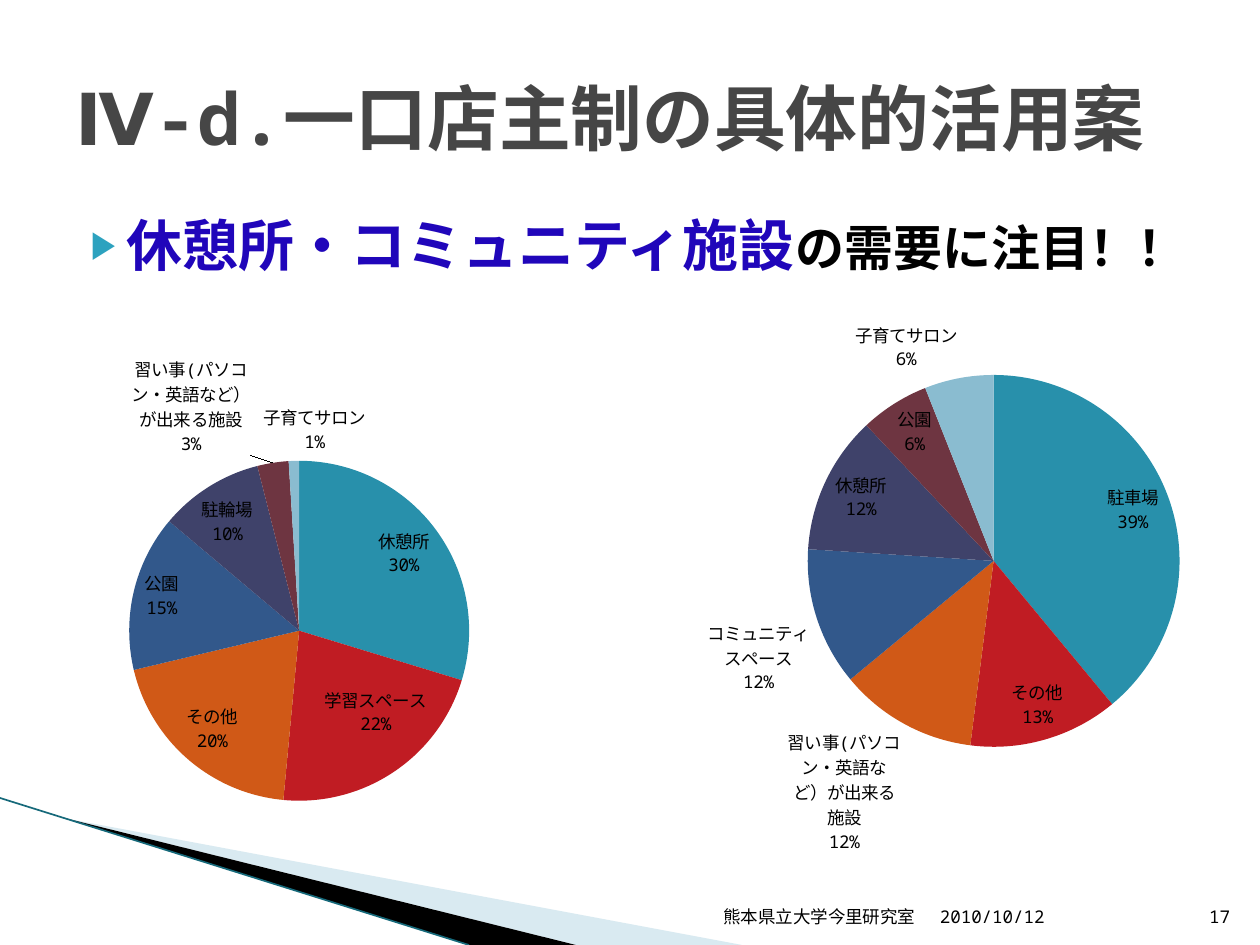
from dataclasses import dataclass

from lxml.etree import SubElement
from pptx import Presentation
from pptx.chart.data import CategoryChartData
from pptx.dml.color import RGBColor
from pptx.enum.chart import XL_CHART_TYPE, XL_LABEL_POSITION
from pptx.enum.text import MSO_ANCHOR, MSO_AUTO_SIZE, PP_ALIGN
from pptx.oxml import parse_xml
from pptx.oxml.ns import nsdecls, qn
from pptx.util import Pt


@dataclass(frozen=True)
class Theme:
    """Colours, font and type sizes of the slide."""
    font: str = "Noto Sans Mono"
    title: str = "464646"
    highlight: str = "2006BA"
    text: str = "000000"
    bullet: str = "2DA2BF"
    swoosh: str = "A0CBDC"
    edge: str = "16697A"
    slices: tuple = ("2890AB", "C01C23", "D05917", "32588B", "3F426A", "6E3541", "8ABCD0")
    title_size: int = 41
    highlight_size: int = 32
    body_size: int = 28
    small_size: int = 10


THEME = Theme()
LESSONS = "習い事(パソコン・英語など）が出来る施設"


def rgb(value):
    """Return the colour for a hex value."""
    return RGBColor.from_string(value)


def style_font(font, size, color, bold=False):
    """Apply the theme font with a size and colour."""
    font.name, font.size, font.bold = THEME.font, Pt(size), bold
    font.color.rgb = rgb(color)


def place(shape, box):
    """Move a shape to a box of left, top, width and height."""
    shape.left, shape.top, shape.width, shape.height = (Pt(length) for length in box)


def add_wedge(slide, points, color, alpha=None):
    """Draw one filled wedge of the corner decoration."""
    builder = slide.shapes.build_freeform(Pt(points[0][0]), Pt(points[0][1]), scale=1.0)
    builder.add_line_segments([(Pt(x), Pt(y)) for x, y in points[1:]], close=True)
    wedge = builder.convert_to_shape()
    wedge.shadow.inherit = False
    wedge.fill.solid()
    wedge.fill.fore_color.rgb = rgb(color)
    wedge.line.fill.background()
    if alpha:
        fill_color = wedge.element.spPr.find(qn("a:solidFill"))[0]
        SubElement(fill_color, qn("a:alpha"), val=str(alpha * 1000))


def add_decoration(slide, box):
    """Draw the wedges and the edge line in the bottom left corner."""
    left, top, width, height = box
    right, bottom = left + width, top + height
    tip = (left + 39, top + 12)
    add_wedge(slide, [tip, (right, bottom), (left + 329, bottom)], THEME.swoosh, 40)
    add_wedge(slide, [tip, (left + 329, bottom), (left + 268, bottom)], "000000")
    edge = slide.shapes.add_connector(1, Pt(left), Pt(top), Pt(left + 268), Pt(bottom))
    edge.line.color.rgb = rgb(THEME.edge)
    edge.line.width = Pt(0.95)
    SubElement(edge.element.spPr, qn("a:effectLst"))


def fill_title(slide, box):
    """Fill the title placeholder."""
    title = slide.shapes.title
    place(title, box)
    frame = title.text_frame
    frame.text = "Ⅳ-d.一口店主制の具体的活用案"
    frame.auto_size = MSO_AUTO_SIZE.NONE
    frame.vertical_anchor = MSO_ANCHOR.MIDDLE
    paragraph = frame.paragraphs[0]
    paragraph.alignment = PP_ALIGN.LEFT
    style_font(paragraph.font, THEME.title_size, THEME.title, True)


def fill_body(slide, box):
    """Fill the body placeholder with the bulleted key message."""
    body = slide.placeholders[1]
    place(body, box)
    body.text_frame.auto_size = MSO_AUTO_SIZE.NONE
    paragraph = body.text_frame.paragraphs[0]
    paragraph.space_before = Pt(0)
    properties = paragraph._p.get_or_add_pPr()
    properties.set("marL", str(Pt(28.8)))
    properties.set("indent", str(-Pt(20.2)))
    bullet_color = SubElement(properties, qn("a:buClr"))
    SubElement(bullet_color, qn("a:srgbClr"), val=THEME.bullet)
    SubElement(properties, qn("a:buSzPct"), val="68000")
    SubElement(properties, qn("a:buChar"), char="▶")
    for text, size, color in (
        ("休憩所・コミュニティ施設", THEME.highlight_size, THEME.highlight),
        ("の需要に注目！！", THEME.body_size, THEME.text),
    ):
        run = paragraph.add_run()
        run.text = text
        style_font(run.font, size, color, True)


def add_footer(slide, box):
    """Place laboratory, date and slide number side by side."""
    left, top, width, height = box
    for text, part_width, alignment in (
        ("熊本県立大学今里研究室", 185, PP_ALIGN.RIGHT),
        ("2010/10/12", 151, PP_ALIGN.LEFT),
        ("17", width - 336, PP_ALIGN.RIGHT),
    ):
        label = slide.shapes.add_textbox(Pt(left), Pt(top), Pt(part_width), Pt(height))
        frame = label.text_frame
        frame.word_wrap = True
        frame.vertical_anchor = MSO_ANCHOR.BOTTOM
        paragraph = frame.paragraphs[0]
        paragraph.text = text
        paragraph.alignment = alignment
        style_font(paragraph.font, THEME.small_size, THEME.text)
        left += part_width


def set_plot_box(chart, box, pie_box):
    """Fix the pie inside the chart box."""
    left, top, width, height = box
    pie_left, pie_top, diameter = pie_box
    values = {
        "x": (pie_left - left) / width, "y": (pie_top - top) / height,
        "w": diameter / width, "h": diameter / height,
    }
    modes = '<c:layoutTarget val="inner"/><c:xMode val="edge"/><c:yMode val="edge"/>'
    sizes = "".join(f'<c:{name} val="{value:.3f}"/>' for name, value in values.items())
    plot_area = chart._chartSpace.chart.plotArea
    for layout in plot_area.findall(qn("c:layout")):
        plot_area.remove(layout)
    plot_area.insert(0, parse_xml(
        f'<c:layout {nsdecls("c")}><c:manualLayout>{modes}{sizes}</c:manualLayout></c:layout>'))


def add_pie(slide, box, pie_box, shares):
    """Add a pie chart labelled with category and percentage."""
    data = CategoryChartData()
    data.categories = list(shares)
    data.add_series("Series 1", list(shares.values()))
    chart = slide.shapes.add_chart(
        XL_CHART_TYPE.PIE, *(Pt(length) for length in box), data).chart
    chart.has_legend = chart.has_title = False
    style_font(chart.font, THEME.small_size, THEME.text)
    set_plot_box(chart, box, pie_box)
    plot = chart.plots[0]
    plot.vary_by_categories = True
    for index, color in enumerate(THEME.slices):
        fill = plot.series[0].points[index].format.fill
        fill.solid()
        fill.fore_color.rgb = rgb(color)
    labels = plot.series[0].data_labels
    labels.show_value = False
    labels.show_category_name = labels.show_percentage = True
    labels.number_format, labels.number_format_is_linked = "0%", False
    labels.position = XL_LABEL_POSITION.BEST_FIT
    separator = parse_xml(f'<c:separator {nsdecls("c")}>\n</c:separator>')
    labels._element.find(qn("c:showBubbleSize")).addnext(separator)


def main():
    """Build and save the slide."""
    presentation = Presentation()
    presentation.slide_width, presentation.slide_height = Pt(720), Pt(540)
    slide = presentation.slides.add_slide(presentation.slide_layouts[1])
    add_decoration(slide, (0, 456, 424, 84))
    fill_title(slide, (36, 21.6, 648, 90))
    fill_body(slide, (36, 116.6, 648, 356.4))
    add_footer(slide, (345, 504.7, 365, 28.8))
    add_pie(slide, (371.5, 173.5, 334.8, 329), (461.7, 214.3, 212.6), {
        "駐車場": 39, "その他": 13, LESSONS: 12, "コミュニティスペース": 12,
        "休憩所": 12, "公園": 6, "子育てサロン": 6})
    add_pie(slide, (0, 179.3, 360, 323.3), (73.7, 263.4, 194.3), {
        "休憩所": 30, "学習スペース": 22, "その他": 20, "公園": 15,
        "駐輪場": 10, LESSONS: 3, "子育てサロン": 1})
    presentation.save("out.pptx")


if __name__ == "__main__":
    main()
